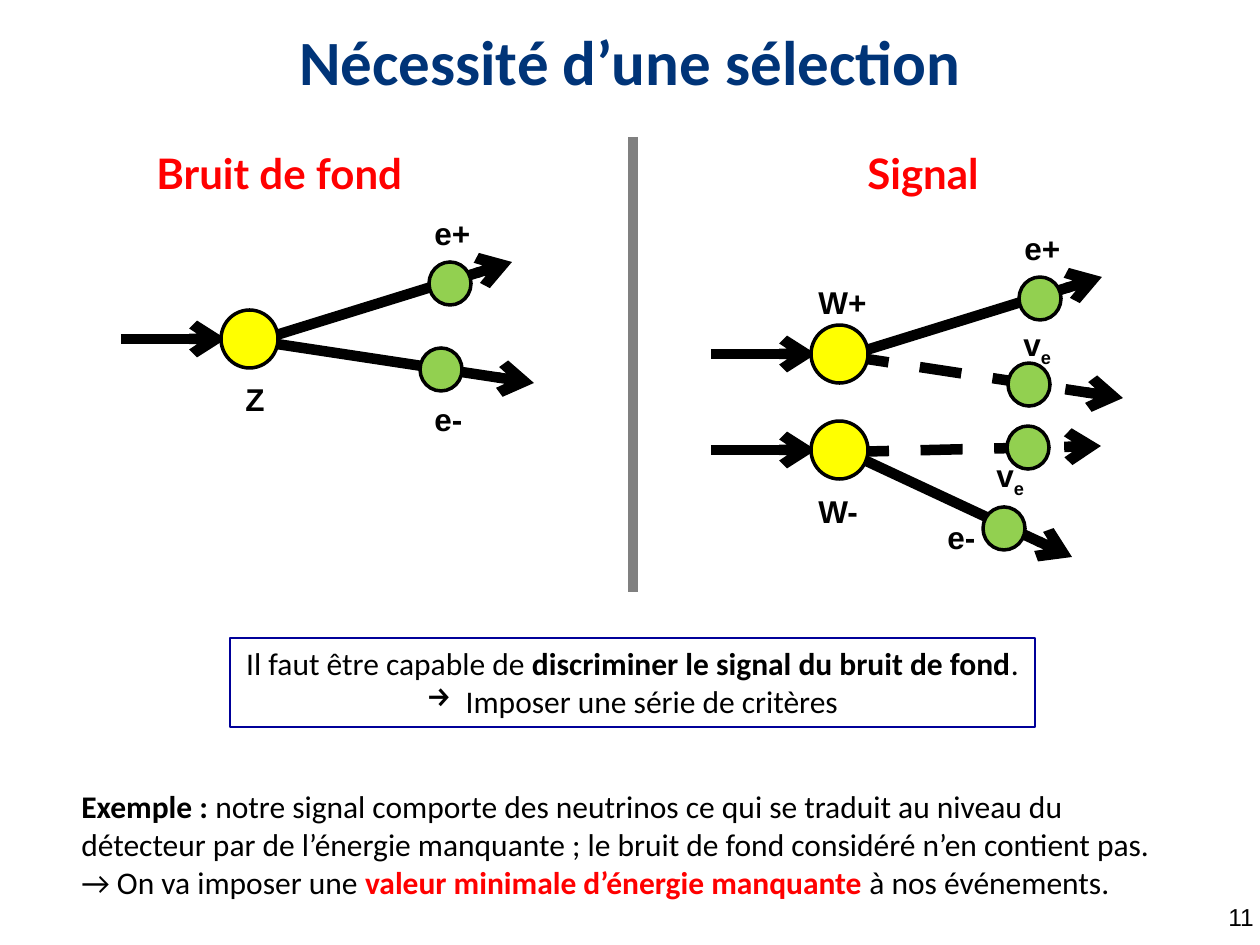
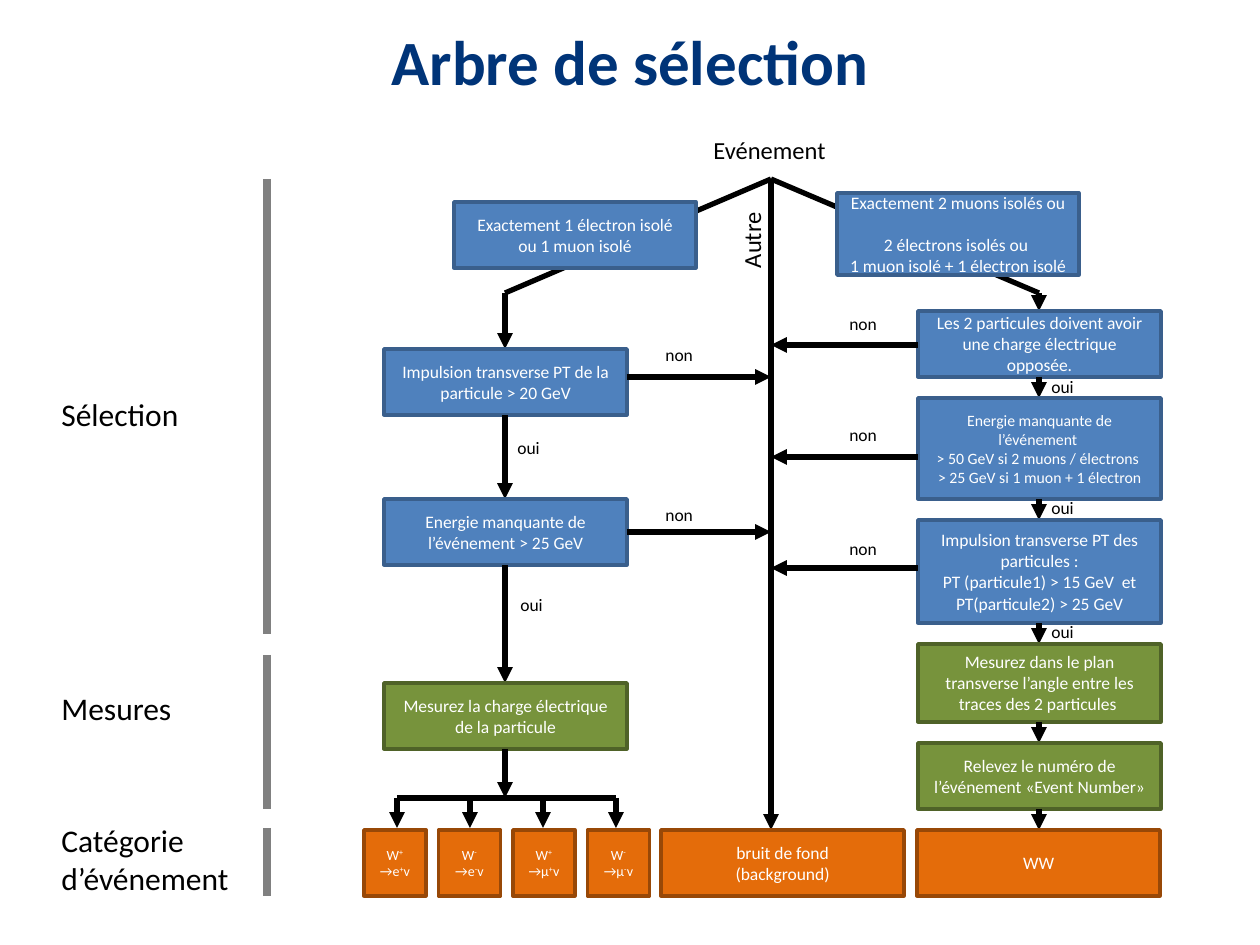
from copy import deepcopy

from lxml import etree
from pptx import Presentation
from pptx.dml.color import RGBColor
from pptx.enum.dml import MSO_LINE
from pptx.enum.shapes import MSO_CONNECTOR, MSO_SHAPE
from pptx.enum.text import MSO_ANCHOR, MSO_AUTO_SIZE, PP_ALIGN
from pptx.oxml.ns import qn
from pptx.util import Emu, Pt

STRAIGHT = MSO_CONNECTOR.STRAIGHT
RECTANGLE, OVAL = MSO_SHAPE.RECTANGLE, MSO_SHAPE.OVAL
DASH = MSO_LINE.DASH
TOP, MIDDLE = MSO_ANCHOR.TOP, MSO_ANCHOR.MIDDLE
LEFT, CENTER = PP_ALIGN.LEFT, PP_ALIGN.CENTER
FIT, FIXED = MSO_AUTO_SIZE.SHAPE_TO_FIT_TEXT, MSO_AUTO_SIZE.NONE

SCALE = 914400 / 126
BLACK, WHITE, GREY, RED, NAVY = "000000", "FFFFFF", "808080", "FF0000", "003478"
FRAME, YELLOW, LIME = "000099", "FFFF00", "92D050"
CUT, MEASURE, CATEGORY = ("4F81BD", "3A5F8C"), ("77933C", "4F6228"), ("E46C0A", "984807")

BODY = {"name": "Calibri", "size": 18, "bold": False, "color": BLACK}
TITLE = {**BODY, "size": 36, "bold": True, "color": NAVY}
HEADING = {**BODY, "name": "Lato", "size": 24, "bold": True, "color": RED}
PARTICLE = {**BODY, "name": "Arial", "bold": True}
NUMBER = {**BODY, "name": "Arial", "size": 14}
EVENT = {**BODY, "size": 14}
ANSWER = {**BODY, "size": 10}
STEP = {**BODY, "size": 10, "color": WHITE}
BOLD = {"bold": True}
SUPER, SUB = {"baseline": 30000}, {"baseline": -25000}
NEUTRINO = [[("v", {}), ("e", SUB)]]


def px(length):
    """Turn pixels into EMU."""
    return Emu(round(length * SCALE))


def rgb(color):
    """Turn a hex string into a colour."""
    return RGBColor.from_string(color)


def set_all(target, values):
    """Set several attributes of one object."""
    for key, value in values.items():
        setattr(target, key, value)


def add_run(paragraph, text, style):
    """Add formatted text, with its line breaks, to a paragraph."""
    for index, line in enumerate(text.split("\n")):
        if index:
            paragraph.add_line_break()
            paragraph._p[-1].append(deepcopy(run._r.get_or_add_rPr()))
        run = paragraph.add_run()
        run.text = line
        set_all(run.font, {"name": style["name"], "size": Pt(style["size"]), "bold": style["bold"]})
        run.font.color.rgb = rgb(style["color"])
        if "baseline" in style:
            run._r.get_or_add_rPr().set("baseline", str(style["baseline"]))


def write(shape, content, style, align=LEFT, **frame):
    """Fill a shape with a string or with paragraphs made of runs."""
    paragraphs = [[(content, {})]] if isinstance(content, str) else content
    set_all(shape.text_frame, frame)
    for index, runs in enumerate(paragraphs):
        paragraph = shape.text_frame.add_paragraph() if index else shape.text_frame.paragraphs[0]
        paragraph.alignment = align
        for text, changes in runs:
            add_run(paragraph, text, {**style, **changes})


def add_text(slide, box, content, style, align=LEFT, wrap=False, size=FIT):
    """Add a text box."""
    label = slide.shapes.add_textbox(*map(px, box))
    write(label, content, style, align, word_wrap=wrap, auto_size=size, vertical_anchor=TOP)
    return label


def add_filled(slide, preset, box, fill, outline):
    """Add a preset shape with a fill and an outline."""
    shape = slide.shapes.add_shape(preset, *map(px, box))
    shape.shadow.inherit = False
    shape.fill.solid()
    shape.fill.fore_color.rgb = rgb(fill)
    shape.line.color.rgb = rgb(outline)
    shape.line.width = Pt(2)
    return shape


def add_line(slide, start, end, width=3, color=BLACK, tip=None, dash=None):
    """Add a line, with an arrowhead at its end if asked."""
    line = slide.shapes.add_connector(STRAIGHT, *map(px, (*start, *end)))
    line.line.color.rgb = rgb(color)
    line.line.width = Pt(width)
    if dash:
        line.line.dash_style = dash
    if tip:
        etree.SubElement(line.line._get_or_add_ln(), qn("a:tailEnd"), type=tip)
    etree.SubElement(line._element.spPr, qn("a:effectLst"))


def add_step(slide, box, content, colors, size=10):
    """Add one box of the selection tree."""
    step = add_filled(slide, RECTANGLE, box, *colors)
    write(step, content, {**STEP, "size": size}, CENTER, word_wrap=True, vertical_anchor=MIDDLE)


def add_slide(deck, title):
    """Add a blank slide with the shared title."""
    slide = deck.slides.add_slide(deck.slide_layouts[6])
    add_text(slide, (0, 16, 1260, 89), title, TITLE, CENTER, True)
    return slide


def draw_decay(slide, left, middle, boson, branches):
    """Draw a boson and its decay, relative to the start of the incoming arrow."""
    def place(x, y):
        return left + x, middle + y

    add_line(slide, place(0, 0), place(105, 0), 6, tip="arrow")
    for end, particle, dash, _ in branches:
        add_line(slide, place(136, 2), place(*end), 6, tip="arrow", dash=dash)
        add_filled(slide, OVAL, (*place(*particle), 42, 43), LIME, BLACK)
    add_filled(slide, OVAL, (*place(100, -29), 57, 58), YELLOW, BLACK)
    for name, x, y, width in [boson, *(branch[3] for branch in branches)]:
        add_text(slide, (*place(x, y), width, 50), name, PARTICLE)


def draw_conclusion(slide, left, top):
    """Draw the framed statement."""
    frame = add_text(slide, (left, top, 805, 89), [
        [("Il faut être capable de ", {}), ("discriminer le signal du bruit de fond", BOLD), (".", {})],
        [("Imposer une série de critères", {})],
    ], BODY, CENTER)
    frame.line.color.rgb = rgb(FRAME)
    frame.line.width = Pt(0.75)
    properties = frame.text_frame.paragraphs[1]._p.get_or_add_pPr()
    properties.set("marL", str(px(39)))
    properties.set("indent", str(px(-39)))
    etree.SubElement(properties, qn("a:buChar"), char="→")


def build_need(deck):
    """Build the slide comparing background and signal."""
    slide = add_slide(deck, "Nécessité d’une sélection")
    add_text(slide, (1216, 896, 44, 37), "11", NUMBER, size=FIXED)
    positron = ((391, -77), (308, -77), None, ("e+", 301, -131, 62))
    draw_decay(slide, 121, 339, ("Z", 112, 35, 45), [
        ((413, 44), (299, 9), None, ("e-", 301, 55, 54)), positron])
    draw_decay(slide, 711, 354, ("W+", 95, -77, 74), [
        ((412, 44), (297, 9), DASH, (NEUTRINO, 300, -35, 55)), positron])
    draw_decay(slide, 711, 450, ("W-", 95, 36, 66), [
        ((361, 107), (272, 57), None, ("e-", 224, 62, 54)),
        ((390, -4), (296, -24), DASH, (NEUTRINO, 273, 0, 55))])
    add_line(slide, (633, 137), (633, 592), 6, GREY)
    for heading, left, width in (("Bruit de fond", 144, 349), ("Signal", 855, 184)):
        add_text(slide, (left, 141, width, 63), heading, HEADING)
    draw_conclusion(slide, 230, 638)
    add_text(slide, (69, 781, 1121, 127), [
        [("Exemple : ", BOLD),
         ("notre signal comporte des neutrinos ce qui se traduit au niveau du détecteur par de "
          "l’énergie manquante ; le bruit de fond considéré n’en contient pas.", {})],
        [("→ On va imposer une ", {}),
         ("valeur minimale d’énergie manquante ", {"bold": True, "color": RED}),
         ("à nos événements.", {})],
    ], BODY, wrap=True)


def draw_chain(slide, left, axis, start, end, steps):
    """Draw a column of boxes joined by arrows along a vertical axis."""
    for top, height, content, colors, size in steps:
        add_line(slide, (axis, start), (axis, top), tip="triangle")
        add_step(slide, (left, top, 243, height), content, colors, size)
        start = top + height
    add_line(slide, (axis, start), (axis, end), tip="triangle")


def draw_sections(slide, left, bar):
    """Draw the stage names and their vertical bars."""
    for name, top, width, height, start, end in (
        ("Sélection", 389, 170, 52, 179, 634),
        ("Mesures", 683, 156, 50, 655, 809),
        ("Catégorie d’événement", 815, 200, 89, 828, 896),
    ):
        add_text(slide, (left, top, width, height), name, BODY, wrap=True)
        add_line(slide, (bar, start), (bar, end), 4.5, GREY)


def draw_root(slide, axis, top):
    """Draw the event, its two selections and the way to the background."""
    for foot in (505, 1039):
        add_line(slide, (axis, top), (foot, top + 114))
    add_line(slide, (axis, top), (axis, 830), tip="triangle")
    add_text(slide, (axis - 70, top - 50, 139, 43), "Evénement", EVENT)
    add_text(slide, (axis - 60, top + 39, 82, 43), "Autre", EVENT).rotation = 270
    add_step(slide, (axis - 317, top + 23, 242, 66),
             "Exactement 1 électron isolé ou 1 muon isolé", CUT)
    add_step(slide, (axis + 66, top + 14, 242, 82),
             "Exactement 2 muons isolés ou \n2 électrons isolés ou \n1 muon isolé + 1 électron isolé", CUT)


def draw_answers(slide, axis):
    """Draw the rejections towards the axis and the answer labels."""
    for edge, label, levels in (
        (627, 653, ((377, 338), (532, 498))),
        (918, 837, ((345, 307), (457, 418), (568, 532))),
    ):
        for level, top in levels:
            add_line(slide, (edge, level), (axis, level), tip="triangle")
            add_text(slide, (label, top, 53, 34), "non", ANSWER)
    for left, top in ((505, 431), (508, 588), (1039, 370), (1039, 491), (1039, 615)):
        add_text(slide, (left, top, 48, 34), "oui", ANSWER)


def draw_categories(slide, left, top):
    """Draw the final categories and the fork above the W ones."""
    fork = top - 32
    add_line(slide, (left + 33, fork), (left + 252, fork))
    for index, (charge, lepton) in enumerate((("+", "e"), ("-", "e"), ("+", "µ"), ("-", "µ"))):
        branch = left + 33 + 73 * index
        add_line(slide, (branch, fork), (branch, top - 2), tip="triangle")
        decay = [[("W", {}), (charge + "\n", SUPER), ("→" + lepton, {}), (charge, SUPER), ("v", {})]]
        add_step(slide, (left + 74.5 * index, top, 62, 66), decay, CATEGORY, 8)
    background = [[("bruit de fond", {})], [("(background)", {})]]
    for offset, content in ((297, background), (553, "WW")):
        add_step(slide, (left + offset, top, 243, 66), content, CATEGORY)


def build_tree(deck):
    """Build the slide with the selection tree."""
    slide = add_slide(deck, "Arbre de sélection")
    draw_sections(slide, 49, 267)
    draw_root(slide, 771, 179)
    draw_chain(slide, 384, 505, 293, 798, [
        (349, 66, "Impulsion transverse PT de la particule > 20 GeV", CUT, 10),
        (499, 66, "Energie manquante de l’événement > 25 GeV", CUT, 10),
        (683, 66, "Mesurez la charge électrique de la particule", MEASURE, 10),
    ])
    draw_chain(slide, 918, 1039, 293, 830, [
        (311, 66, "Les 2 particules doivent avoir une charge électrique opposée.", CUT, 10),
        (398, 101, [[("Energie manquante de l’événement ", {})],
                    [("> 50 GeV si 2 muons / électrons \n> 25 GeV si 1 muon + 1 électron", {})]], CUT, 9),
        (520, 103, [[("Impulsion transverse PT des particules :", {})],
                    [("PT (particule1) > 15 GeV  et", {})],
                    [("PT(particule2) > 25 GeV", {})]], CUT, 10),
        (644, 78, "Mesurez dans le plan transverse l’angle entre les traces des 2 particules ", MEASURE, 10),
        (743, 66, "Relevez le numéro de l’événement «Event Number»", MEASURE, 10),
    ])
    draw_answers(slide, 771)
    draw_categories(slide, 364, 830)


def main():
    """Build and save the deck."""
    deck = Presentation()
    set_all(deck, {"slide_width": px(1260), "slide_height": px(945)})
    build_need(deck)
    build_tree(deck)
    deck.save("out.pptx")


if __name__ == "__main__":
    main()
